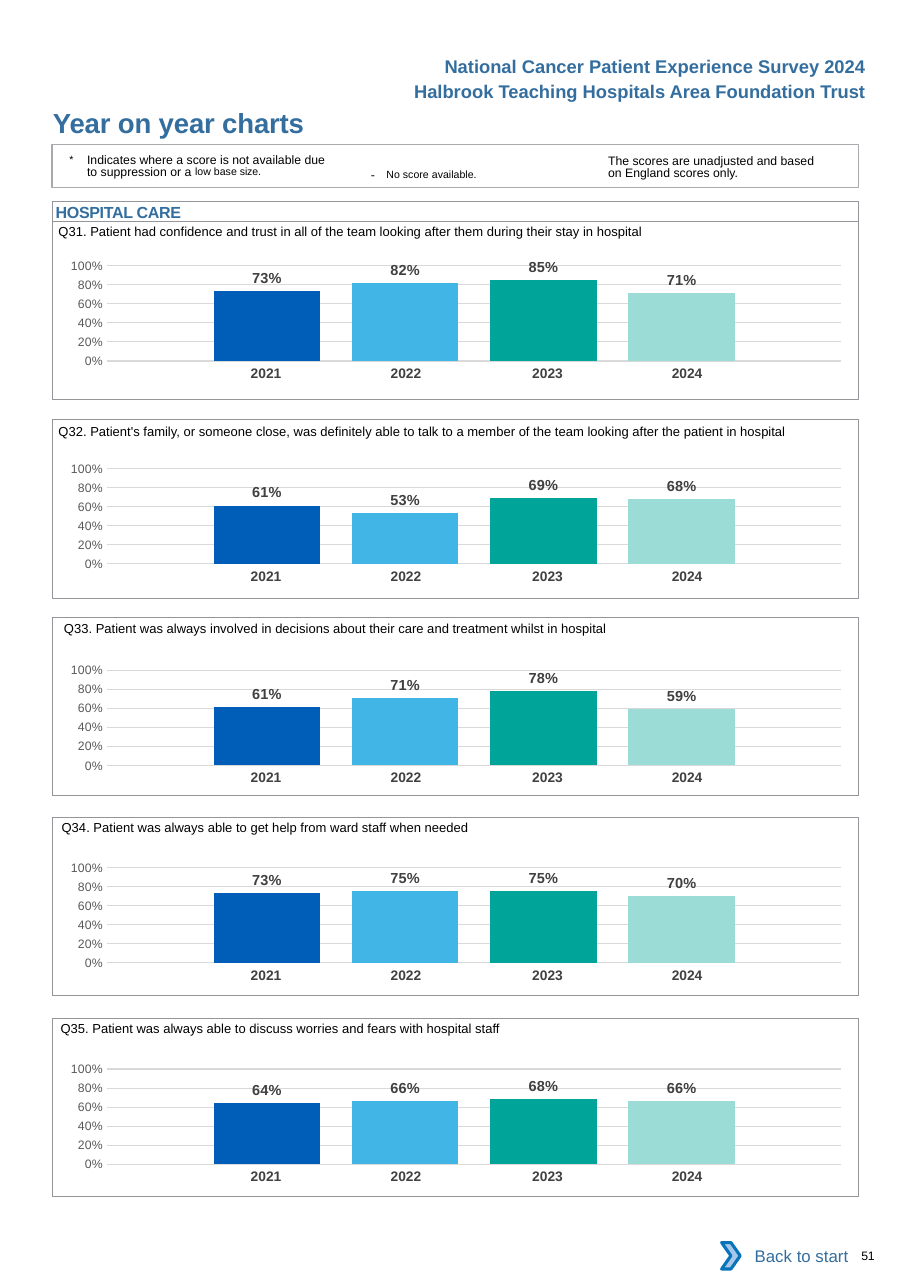
"""Year on year charts page for the hospital care questions."""
from pptx import Presentation
from pptx.chart.data import CategoryChartData
from pptx.dml.color import RGBColor
from pptx.enum.chart import XL_CHART_TYPE, XL_LABEL_POSITION, XL_TICK_MARK
from pptx.enum.shapes import MSO_SHAPE
from pptx.enum.text import MSO_ANCHOR, PP_ALIGN
from pptx.oxml import parse_xml
from pptx.oxml.ns import nsdecls
from pptx.util import Pt

COLORS = {
    "heading": "336E9F", "text": "000000", "year": "414042", "label": "404040",
    "tick": "595959", "grid": "D9D9D9", "frame": "939598", "note frame": "A9AAAD",
    "chevron": "A8C7E9", "chevron edge": "0A74BB", "white": "FFFFFF",
    "2021": "005EB8", "2022": "41B6E6", "2023": "00A499", "2024": "9CDCD7",
}
YEARS = ["2021", "2022", "2023", "2024"]
COLUMN_WIDTHS = [91.5, 91.5, 96.5, 91.5]
YEAR_RIGHT_INSETS = [0, 0, 3, 8.5]
PLOT = {"x": 0.08, "y": 0.15, "w": 0.91, "h": 0.67}
NO_TABLE_STYLE = "{2D5ABB26-0587-4C30-8999-92F81FD0307C}"
PANELS = [
    ("Q31. Patient had confidence and trust in all of the team looking after them "
     "during their stay in hospital", 38.2, 139.7, 144.7, 159.8, [0.73, 0.82, 0.85, 0.71]),
    ("Q32. Patient's family, or someone close, was definitely able to talk to a member "
     "of the team looking after the patient in hospital",
     38.2, 270, 274.3, 292.3, [0.61, 0.53, 0.69, 0.68]),
    ("Q33. Patient was always involved in decisions about their care and treatment "
     "whilst in hospital", 41.8, 398.9, 403.2, 424.1, [0.61, 0.71, 0.78, 0.59]),
    ("Q34. Patient was always able to get help from ward staff when needed",
     40.3, 529.2, 534.2, 553, [0.73, 0.75, 0.75, 0.7]),
    ("Q35. Patient was always able to discuss worries and fears with hospital staff",
     39.6, 660.2, 665.3, 684.7, [0.64, 0.66, 0.68, 0.66]),
]


def write(frame, text, size=8, color="text", bold=False, spacing=0, baseline=0,
          align=PP_ALIGN.LEFT, insets=(0, 0, 0, 0), anchor=MSO_ANCHOR.TOP, wrap=True):
    """Append a formatted span to the first paragraph of a text frame."""
    frame.word_wrap = wrap
    frame.vertical_anchor = anchor
    (frame.margin_left, frame.margin_top,
     frame.margin_right, frame.margin_bottom) = [Pt(inset) for inset in insets]
    para = frame.paragraphs[0]
    para.alignment = align
    span = para.add_run()
    span.text = text
    span.font.name = "Arial"
    span.font.size = Pt(size)
    span.font.bold = bold
    span.font.color.rgb = RGBColor.from_string(COLORS[color])
    properties = span.font._element
    if spacing:
        properties.set("spc", str(round(spacing * 100)))
    if baseline:
        properties.set("baseline", str(baseline * 1000))
    return para


def add_box(left, top, width, height, preset=MSO_SHAPE.RECTANGLE, fill=None,
            line=None, weight=0.5):
    """Add a preset shape with optional fill and outline."""
    box = page.shapes.add_shape(preset, Pt(left), Pt(top), Pt(width), Pt(height))
    box.shadow.inherit = False
    if fill:
        box.fill.solid()
        box.fill.fore_color.rgb = RGBColor.from_string(COLORS[fill])
    else:
        box.fill.background()
    if line:
        box.line.color.rgb = RGBColor.from_string(COLORS[line])
        box.line.width = Pt(weight)
    else:
        box.line.fill.background()
    return box


deck = Presentation()
deck.slide_width, deck.slide_height = Pt(594.72), Pt(841.68)
page = deck.slides.add_slide(deck.slide_layouts[6])

for text, top in [("National Cancer Patient Experience Survey 2024", 32.7),
                  ("Halbrook Teaching Hospitals Area Foundation Trust", 49)]:
    heading = page.shapes.add_textbox(Pt(260.6), Pt(top), Pt(312.5), Pt(21.6))
    write(heading.text_frame, text, size=12, color="heading", bold=True,
          align=PP_ALIGN.RIGHT, insets=(7.2, 3.6, 7.2, 3.6), wrap=False)

title = page.shapes.add_textbox(Pt(34.6), Pt(69.1), Pt(324), Pt(21.6))
write(title.text_frame, "Year on year charts", size=18, color="heading", bold=True,
      spacing=-0.1)

for question, text_left, text_top, panel_top, chart_top, scores in PANELS:
    data = CategoryChartData(number_format="0%")
    data.categories = ["1"]
    for number, score in enumerate(scores, 1):
        data.add_series(f"Series {number}", [score])
    chart = page.shapes.add_chart(XL_CHART_TYPE.COLUMN_CLUSTERED, Pt(28.1), Pt(chart_top),
                                  Pt(527), Pt(92.9), data).chart
    chart.has_legend = False
    chart.has_title = False
    chart.font.name = "Calibri"
    chart.font.size = Pt(10)
    chart.font.color.rgb = RGBColor.from_string(COLORS["text"])
    chart.category_axis.visible = False
    axis = chart.value_axis
    axis.minimum_scale, axis.maximum_scale, axis.major_unit = 0, 1, 0.2
    axis.major_tick_mark = axis.minor_tick_mark = XL_TICK_MARK.NONE
    axis.format.line.fill.background()
    axis.major_gridlines.format.line.color.rgb = RGBColor.from_string(COLORS["grid"])
    axis.major_gridlines.format.line.width = Pt(0.75)
    axis.tick_labels.number_format = "0%"
    axis.tick_labels.number_format_is_linked = False
    axis.tick_labels.font.name = "Arial"
    axis.tick_labels.font.size = Pt(8)
    axis.tick_labels.font.color.rgb = RGBColor.from_string(COLORS["tick"])
    plot = chart.plots[0]
    plot.gap_width, plot.overlap, plot.vary_by_categories = 200, -30, False
    for series, year in zip(plot.series, YEARS):
        series.format.fill.solid()
        series.format.fill.fore_color.rgb = RGBColor.from_string(COLORS[year])
        labels = series.data_labels
        labels.show_value = True
        labels.position = XL_LABEL_POSITION.OUTSIDE_END
        labels.number_format = "0%"
        labels.number_format_is_linked = False
        labels.font.name = "Arial"
        labels.font.size = Pt(9.5)
        labels.font.bold = True
        labels.font.color.rgb = RGBColor.from_string(COLORS["label"])
    area = chart._chartSpace.xpath("c:chart/c:plotArea")[0]
    for old_layout in area.xpath("c:layout"):
        area.remove(old_layout)
    edges = "".join(f'<c:{edge}Mode val="edge"/>' for edge in "xy")
    sizes = "".join(f'<c:{side} val="{share}"/>' for side, share in PLOT.items())
    area.insert(0, parse_xml(
        f'<c:layout {nsdecls("c")}><c:manualLayout><c:layoutTarget val="inner"/>'
        f"{edges}{sizes}</c:manualLayout></c:layout>"))

    frame = page.shapes.add_table(1, 4, Pt(124.5), Pt(chart_top + 75.8), Pt(371), Pt(19.5))
    frame._element.xpath(".//a:tableStyleId")[0].text = NO_TABLE_STYLE
    table = frame.table
    table.first_row = table.horz_banding = False
    table.rows[0].height = Pt(19.5)
    for column, year in enumerate(YEARS):
        table.columns[column].width = Pt(COLUMN_WIDTHS[column])
        cell = table.cell(0, column)
        cell.fill.background()
        write(cell.text_frame, year, size=9, color="year", bold=True, align=PP_ALIGN.CENTER)
        cell.margin_left, cell.margin_right = Pt(7.2), Pt(YEAR_RIGHT_INSETS[column])
        cell.margin_top = cell.margin_bottom = Pt(3.6)

    add_box(34.2, panel_top, 527, 116.6, line="frame")
    caption = page.shapes.add_textbox(Pt(text_left), Pt(text_top), Pt(520), Pt(17.3))
    write(caption.text_frame, question, size=8.5, insets=(0, 6.5, 0, 0))

section = add_box(34.2, 131.8, 527, 13, line="frame")
write(section.text_frame, "HOSPITAL CARE", size=10.5, color="heading", bold=True,
      spacing=-0.2, insets=(2.2, 0.7, 0, 0))

add_box(34, 94.3, 527, 28.1, line="note frame", weight=0.75)
NOTES = [
    (45.4, 99.4, 170.6, (0, 2.2, 0, 0), 8.1,
     [("*\t", {"size": 12, "baseline": 3}),
      ("Indicates where a score is not available due to suppression or a ", {}),
      ("low base", {"size": 12, "baseline": 7}),
      (" size.", {"size": 12, "baseline": 7, "spacing": -0.1})]),
    (235.4, 101.5, 131.8, (7.2, 3.6, 7.2, 3.6), None,
     [("- ", {"spacing": 2.6}),
      ("No score available.", {"size": 12, "baseline": 3})]),
    (397.4, 99.4, 144.7, (0, 2.2, 0, 0), 8.1,
     [("The scores are unadjusted and based on England scores only.", {})]),
]
for left, top, width, insets, leading, spans in NOTES:
    note = page.shapes.add_textbox(Pt(left), Pt(top), Pt(width), Pt(19))
    for text, style in spans:
        para = write(note.text_frame, text, insets=insets, **style)
    if leading:
        para.line_spacing = Pt(leading)
    if spans[0][0].startswith("*"):
        para._p.get_or_add_pPr().set("marL", str(Pt(11.5)))
        para._p.get_or_add_pPr().set("indent", str(-Pt(11.5)))

back = add_box(476.6, 805.7, 85, 30.2, fill="white")
write(back.text_frame, "Back to start", size=11, color="heading", align=PP_ALIGN.RIGHT,
      insets=(7.2, 3.6, 7.2, 3.6), anchor=MSO_ANCHOR.MIDDLE)
add_box(471.6, 812, 12.2, 17.3, preset=MSO_SHAPE.CHEVRON, fill="chevron",
        line="chevron edge", weight=2)
number = page.shapes.add_textbox(Pt(555.8), Pt(815.5), Pt(36.7), Pt(9.4))
write(number.text_frame, "51", spacing=-0.2, insets=(7.2, 0, 0, 0))

deck.save("out.pptx")
